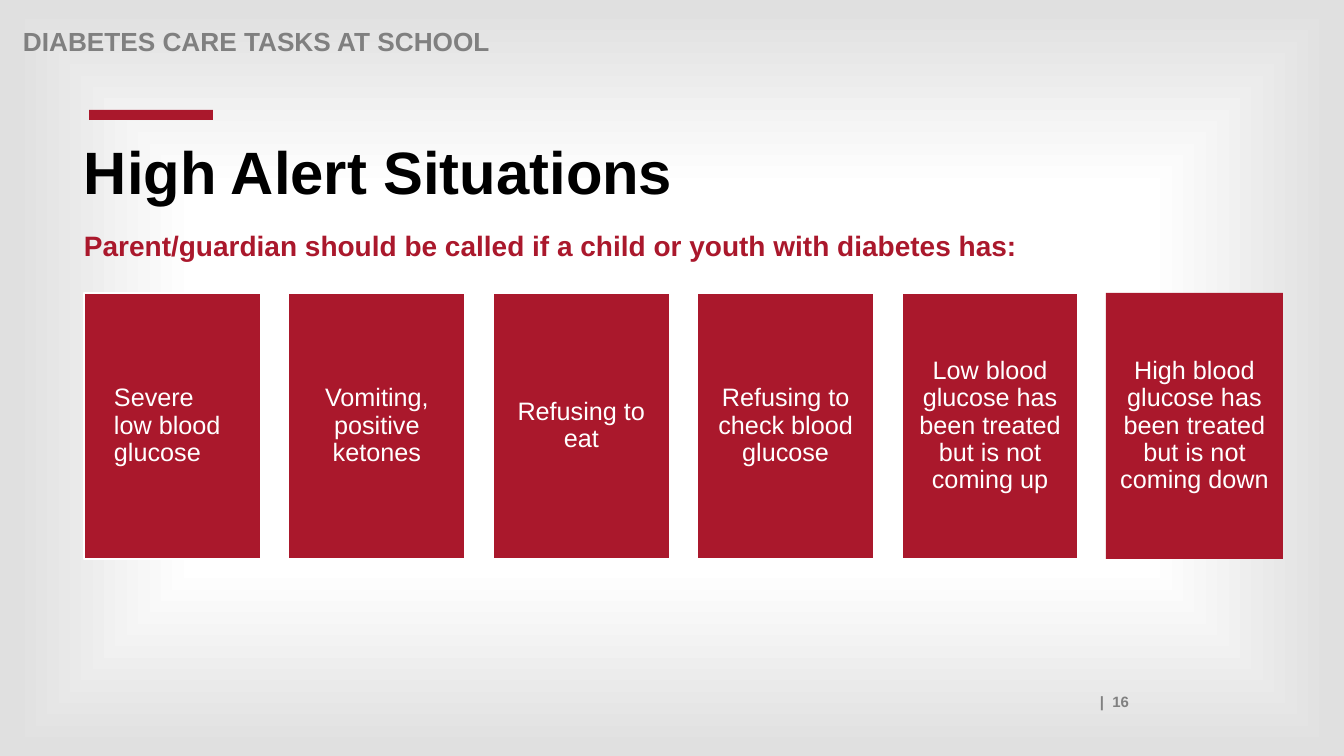
from dataclasses import dataclass

from pptx import Presentation, oxml, util as u
from pptx.dml import color
from pptx.enum import shapes, text
from pptx.oxml import ns

EMU_PER_PX = 914400 / 100.8
LEFT, CENTER, RIGHT = text.PP_ALIGN.LEFT, text.PP_ALIGN.CENTER, text.PP_ALIGN.RIGHT


@dataclass(frozen=True)
class Theme:
    font: str = "Arial"
    red: str = "AA182C"
    white: str = "FFFFFF"
    black: str = "000000"
    gray: str = "808080"
    edge: str = "E0E0E0"
    title: float = 42.7
    subtitle: float = 20
    header: float = 18.7
    card: float = 18
    number: float = 10.7


@dataclass(frozen=True)
class Label:
    words: str
    left: int
    top: int
    width: int
    height: int
    size: float
    tint: str
    align: text.PP_ALIGN = LEFT
    spacing: float = 0.9


@dataclass(frozen=True)
class Card:
    words: str
    align: text.PP_ALIGN = CENTER
    inset: int = 7
    outlined: bool = True


THEME = Theme()

LABELS = [
    Label("DIABETES CARE TASKS AT SCHOOL", 13, 24, 1109, 28, THEME.header, THEME.gray),
    Label("High Alert Situations", 74, 138, 1112, 86, THEME.title, THEME.black),
    Label("Parent/guardian should be called if a child or youth with diabetes has:",
          74, 224, 1045, 51, THEME.subtitle, THEME.red, spacing=1.0),
    Label("|  16", 122, 688, 1017, 28, THEME.number, THEME.gray, RIGHT, 1.0),
]

CARDS = [
    Card("Severe low blood glucose", LEFT, 30),
    Card("Vomiting, positive ketones"),
    Card("Refusing to eat"),
    Card("Refusing to check blood glucose"),
    Card("Low blood glucose has been treated but is not coming up"),
    Card("High blood glucose has been treated but is not coming down", outlined=False),
]
FIRST_LEFT, LAST_LEFT = 84, 1106
CARD_TOP, CARD_WIDTH, CARD_HEIGHT = 293, 177, 266


def px(length: float) -> u.Emu:
    return u.Emu(round(length * EMU_PER_PX))


def rgb(tint: str) -> color.RGBColor:
    return color.RGBColor.from_string(tint)


def paint_background(page) -> None:
    """Fill the page with a gradient from a white middle to gray edges."""
    page.background.fill.gradient()
    gradient = page.element.find(".//" + ns.qn("a:gradFill"))
    stops = "".join(
        f'<a:gs pos="{percent * 1000}"><a:srgbClr val="{tint}"/></a:gs>'
        for percent, tint in ((12, THEME.white), (50, THEME.white), (98, THEME.edge)))
    gradient.getparent().replace(gradient, oxml.parse_xml(
        f'<a:gradFill {ns.nsdecls("a")} rotWithShape="1"><a:gsLst>{stops}</a:gsLst>'
        '<a:path path="shape"><a:fillToRect l="50000" t="50000" r="50000" b="50000"/>'
        '</a:path></a:gradFill>'))


def write(frame, words: str, size: float, tint: str, bold: bool,
          align: text.PP_ALIGN, spacing: float) -> None:
    frame.word_wrap = True
    para = frame.paragraphs[0]
    para.text = words
    para.alignment = align
    para.line_spacing = spacing
    para.font.name = THEME.font
    para.font.size = u.Pt(size)
    para.font.bold = bold
    para.font.color.rgb = rgb(tint)


def add_label(page, label: Label) -> None:
    box = page.shapes.add_textbox(
        px(label.left), px(label.top), px(label.width), px(label.height))
    write(box.text_frame, label.words, label.size, label.tint, True,
          label.align, label.spacing)


def add_block(page, left: float, top: int, width: int, height: int):
    block = page.shapes.add_shape(
        shapes.MSO_SHAPE.RECTANGLE, px(left), px(top), px(width), px(height))
    block.shadow.inherit = False
    block.fill.solid()
    block.fill.fore_color.rgb = rgb(THEME.red)
    block.line.fill.background()
    return block


def add_card(page, card: Card, left: float) -> None:
    block = add_block(page, left, CARD_TOP, CARD_WIDTH, CARD_HEIGHT)
    if card.outlined:
        block.line.color.rgb = rgb(THEME.white)
        block.line.width = u.Pt(1.5)
    frame = block.text_frame
    frame.vertical_anchor = text.MSO_ANCHOR.MIDDLE
    frame.margin_left = frame.margin_right = px(card.inset)
    frame.margin_top = frame.margin_bottom = px(7)
    write(frame, card.words, THEME.card, THEME.white, False, card.align, 0.9)


def main() -> None:
    deck = Presentation()
    deck.slide_width, deck.slide_height = px(1344), px(756)
    page = deck.slides.add_slide(deck.slide_layouts[6])
    paint_background(page)

    # Accent bar and headings
    add_block(page, 89, 110, 124, 10)
    for label in LABELS:
        add_label(page, label)

    # Row of evenly spaced alert cards
    pitch = (LAST_LEFT - FIRST_LEFT) / (len(CARDS) - 1)
    for index, card in enumerate(CARDS):
        add_card(page, card, FIRST_LEFT + index * pitch)

    deck.save("out.pptx")


if __name__ == "__main__":
    main()
